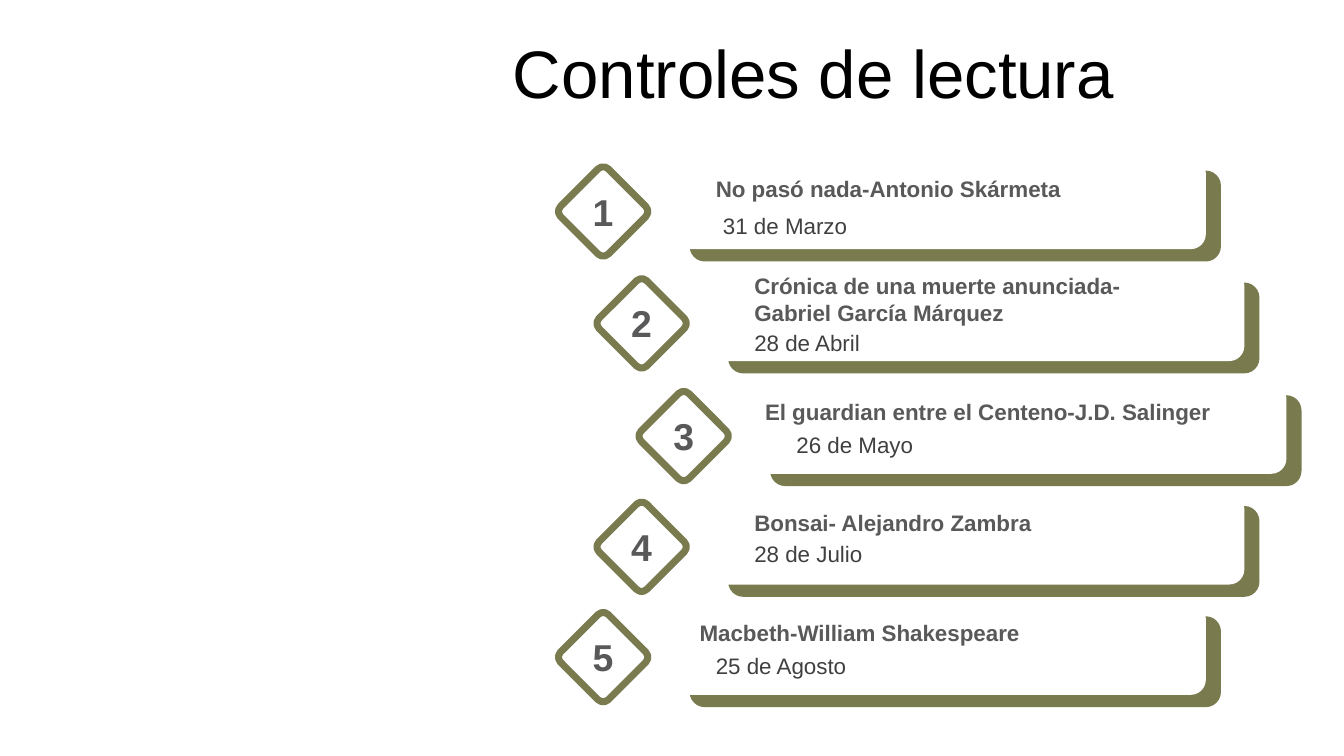
"""Build the reading-test schedule slide with five numbered cards."""
import pptx
import pptx.util
import pptx.dml.color
import pptx.enum.shapes
import pptx.enum.text

Cm, Pt = pptx.util.Cm, pptx.util.Pt
RGBColor = pptx.dml.color.RGBColor
ROUNDED = pptx.enum.shapes.MSO_SHAPE.ROUNDED_RECTANGLE
MIDDLE = pptx.enum.text.MSO_ANCHOR.MIDDLE
LEFT, CENTER = pptx.enum.text.PP_ALIGN.LEFT, pptx.enum.text.PP_ALIGN.CENTER

OLIVE = RGBColor(0x79, 0x7B, 0x4F)
WHITE = RGBColor(0xFF, 0xFF, 0xFF)
BLACK = RGBColor(0x00, 0x00, 0x00)
GRAY = RGBColor(0x59, 0x59, 0x59)
DARK_GRAY = RGBColor(0x40, 0x40, 0x40)

CARD_WIDTH, CARD_HEIGHT = 13.39, 2.29
DIAMOND_SIDE = 1.7


def add_rounded(group, left, top, width, height, color):
    block = group.shapes.add_shape(ROUNDED, Cm(left), Cm(top), Cm(width), Cm(height))
    block.shadow.inherit = False
    block.fill.solid()
    block.fill.fore_color.rgb = color
    block.line.fill.background()
    return block


def add_label(group, box, text, size, color, bold=False, align=LEFT):
    label = group.shapes.add_textbox(*(Cm(length) for length in box))
    frame = label.text_frame
    frame.word_wrap = True
    frame.vertical_anchor = MIDDLE
    frame.text = text
    frame.paragraphs[0].alignment = align
    font = frame.paragraphs[0].runs[0].font
    font.name, font.size, font.bold = "Arial", Pt(size), bold
    font.color.rgb = color


deck = pptx.Presentation()
deck.slide_width, deck.slide_height = Cm(33.87), Cm(19.05)
slide = deck.slides.add_slide(deck.slide_layouts[5])

heading = slide.shapes.title
heading.left, heading.top = Cm(12.67), Cm(0.74)
heading.width, heading.height = Cm(21.2), Cm(2.13)
heading.text_frame.text = "Controles de lectura"
heading.text_frame.vertical_anchor = MIDDLE
heading.text_frame.paragraphs[0].alignment = LEFT
heading_font = heading.text_frame.paragraphs[0].runs[0].font
heading_font.name, heading_font.size = "Arial", Pt(48)
heading_font.color.rgb = BLACK

# Each entry: card left and top, book, its box inside the card, date, its offset
readings = [
    (17.0, 3.99, "No pasó nada-Antonio Skármeta",
     (0.79, 0.28, 11.2, 0.94), "31 de Marzo", (0.97, 1.22)),
    (17.97, 6.81, "Crónica de una muerte anunciada-Gabriel García Márquez",
     (0.79, -0.08, 11.2, 1.63), "28 de Abril", (0.79, 1.35)),
    (19.03, 9.65, "El guardian entre el Centeno-J.D. Salinger",
     (0, 0.25, 12, 0.94), "26 de Mayo", (0.79, 1.07)),
    (17.97, 12.44, "Bonsai- Alejandro Zambra",
     (0.79, 0.25, 11.2, 0.94), "28 de Julio", (0.79, 1.04)),
    (17.0, 15.22, "Macbeth-William Shakespeare",
     (0.38, 0.25, 11.2, 0.94), "25 de Agosto", (0.79, 1.07)),
]

for number, (left, top, book, book_box, date, date_offset) in enumerate(readings, 1):
    entry = slide.shapes.add_group_shape()
    add_rounded(entry, left + 0.38, top + 0.31, CARD_WIDTH, CARD_HEIGHT, OLIVE)
    add_rounded(entry, left, top, CARD_WIDTH, CARD_HEIGHT, WHITE)

    book_dx, book_dy, book_width, book_height = book_box
    add_label(entry, (left + book_dx, top + book_dy, book_width, book_height),
              book, 16, GRAY, bold=True)
    date_dx, date_dy = date_offset
    add_label(entry, (left + date_dx, top + date_dy, 11.2, 0.94), date, 16, DARK_GRAY)

    diamond = add_rounded(entry, left - 2.65, top + 0.49, DIAMOND_SIDE, DIAMOND_SIDE, WHITE)
    diamond.rotation = 45
    diamond.adjustments[0] = 0.107
    diamond.line.color.rgb = OLIVE
    diamond.line.width = Pt(5)
    add_label(entry, (left - 2.36, top + 0.63, 1.12, 1.4), str(number), 26.7, GRAY,
              bold=True, align=CENTER)

deck.save("out.pptx")
